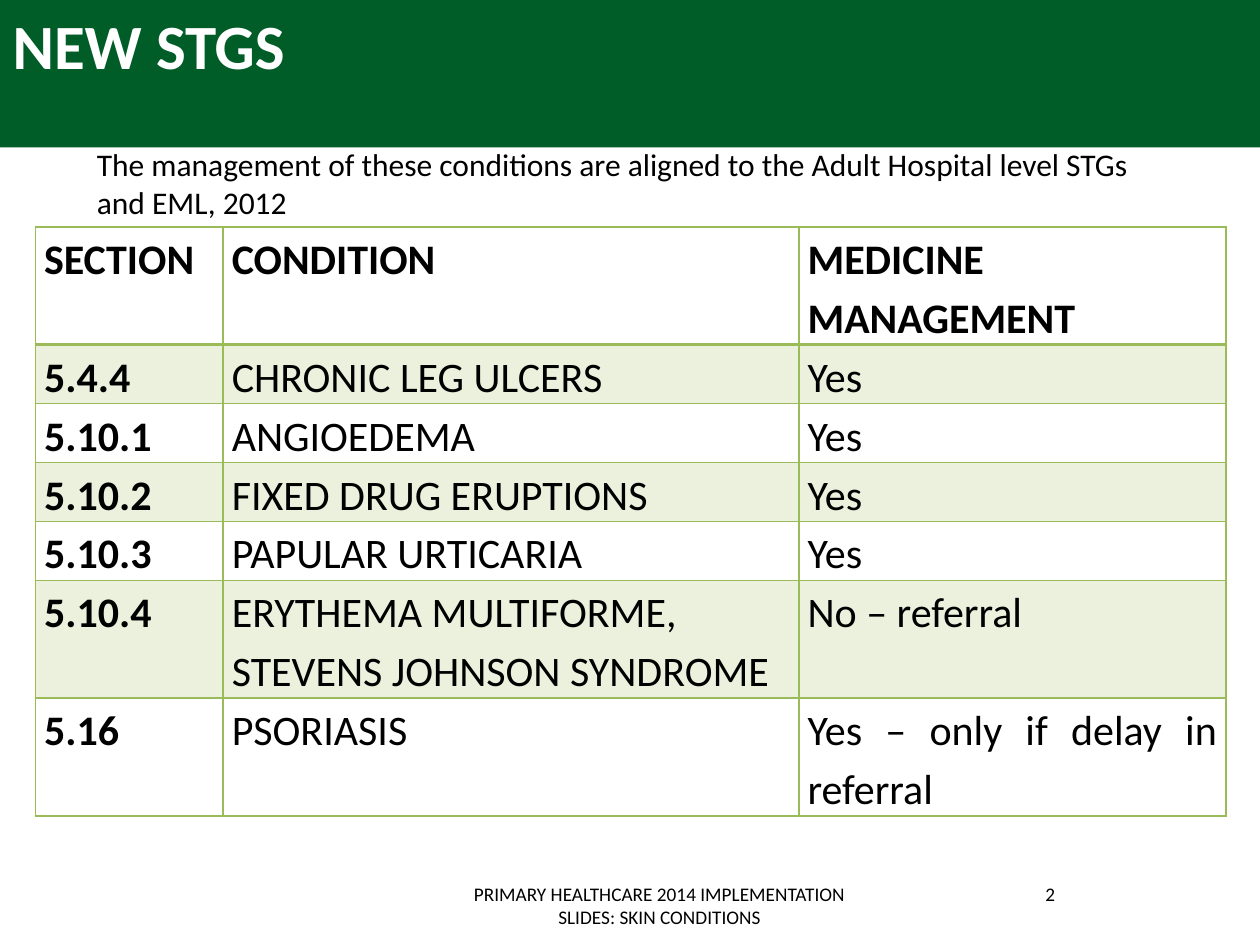
from lxml import etree
from pptx import Presentation
from pptx import util as u
from pptx.dml.color import RGBColor
from pptx.enum import shapes, text
from pptx.oxml.ns import qn

FONT = "Calibri"
BANNER_GREEN = RGBColor(0x00, 0x5D, 0x28)
TABLE_GREEN = RGBColor(0x9B, 0xBB, 0x59)
WHITE = RGBColor(0xFF, 0xFF, 0xFF)
BLACK = RGBColor(0, 0, 0)

ROWS = [
    ("SECTION", "CONDITION", "MEDICINE MANAGEMENT"),
    ("5.4.4", "CHRONIC LEG ULCERS", "Yes"),
    ("5.10.1", "ANGIOEDEMA", "Yes"),
    ("5.10.2", "FIXED DRUG ERUPTIONS", "Yes"),
    ("5.10.3", "PAPULAR URTICARIA", "Yes"),
    ("5.10.4", "ERYTHEMA MULTIFORME, STEVENS JOHNSON SYNDROME", "No – referral"),
    ("5.16", "PSORIASIS", "Yes – only if delay in referral"),
]
COLUMN_WIDTHS = (1.49, 4.57, 3.39)
ROW_HEIGHT, TALL_ROW_HEIGHT, TALL_ROW = 0.39, 0.81, 5


def inches(box):
    """Turn a left, top, width, height box into lengths."""
    return [u.Inches(length) for length in box]


def write(frame, words, size, color=BLACK, bold=False, align=text.PP_ALIGN.LEFT):
    """Put one formatted paragraph in a text frame and return it."""
    frame.text = words
    frame.word_wrap = True
    para = frame.paragraphs[0]
    para.alignment = align
    font = para.runs[0].font
    font.name, font.size, font.bold = FONT, u.Pt(size), bold
    font.color.rgb = color
    return para


def add_banner(page, box):
    """Draw the green band behind the title."""
    band = page.shapes.add_shape(shapes.MSO_SHAPE.RECTANGLE, *inches(box))
    band.shadow.inherit = False
    band.fill.solid()
    band.fill.fore_color.rgb = BANNER_GREEN
    band.line.fill.background()
    page.shapes._spTree.insert(2, band._element)


def set_title(page, box, words):
    """Place and format the title placeholder."""
    title = page.shapes.title
    title.left, title.top, title.width, title.height = inches(box)
    write(title.text_frame, words, 36, WHITE, True)
    title.text_frame.vertical_anchor = text.MSO_ANCHOR.TOP
    title.text_frame.auto_size = text.MSO_AUTO_SIZE.NONE


def add_text(page, box, words, size, align=text.PP_ALIGN.LEFT):
    """Add a wrapped text box."""
    frame = page.shapes.add_textbox(*inches(box)).text_frame
    write(frame, words, size, align=align)
    return frame


def set_borders(cell, widths):
    """Draw the four cell borders, given points by side."""
    for index, side in enumerate("LRTB"):
        line = etree.Element(qn(f"a:ln{side}"), w=str(u.Pt(widths.get(side, 1))))
        fill = etree.SubElement(line, qn("a:solidFill"))
        etree.SubElement(fill, qn("a:srgbClr"), val=str(TABLE_GREEN))
        cell._tc.get_or_add_tcPr().insert(index, line)


def format_cell(cell, words, row, column):
    """Write, fill and border one table cell."""
    cell.margin_left = cell.margin_right = u.Inches(0.07)
    cell.margin_top = cell.margin_bottom = 0
    wrapped_name = row == TALL_ROW and column == 1
    align = text.PP_ALIGN.LEFT if wrapped_name else text.PP_ALIGN.JUSTIFY
    para = write(cell.text_frame, words, 24, bold=row == 0 or column == 0, align=align)
    para.line_spacing = 1.15
    if row % 2:
        cell.fill.solid()
        cell.fill.fore_color.rgb = TABLE_GREEN
        color = cell._tc.tcPr.find(".//" + qn("a:srgbClr"))
        etree.SubElement(color, qn("a:alpha"), val="20000")
    else:
        cell.fill.background()
    set_borders(cell, {0: {"B": 2}, 1: {"T": 2}}.get(row, {}))


def add_conditions_table(page, box):
    """Add the table of conditions and their management."""
    holder = page.shapes.add_table(len(ROWS), len(COLUMN_WIDTHS), *inches(box))
    table = holder.table
    table.first_row = table.horz_banding = False
    for column, width in zip(table.columns, COLUMN_WIDTHS):
        column.width = u.Inches(width)
    for row, values in enumerate(ROWS):
        height = TALL_ROW_HEIGHT if row == TALL_ROW else ROW_HEIGHT
        table.rows[row].height = u.Inches(height)
        for column, words in enumerate(values):
            format_cell(table.cell(row, column), words, row, column)
    holder.height = u.Inches(box[3])


def main():
    """Build and save the slide."""
    deck = Presentation()
    deck.slide_width, deck.slide_height = u.Inches(10), u.Inches(7.5)
    page = deck.slides.add_slide(deck.slide_layouts[5])
    add_banner(page, (0, 0, 10, 1.17))
    set_title(page, (0, 0, 9, 1.25), "NEW STGS")
    add_conditions_table(page, (0.28, 1.8, 9.45, 4.6))
    note = add_text(
        page, (0.67, 1.1, 8.58, 0.71),
        "The management of these conditions are aligned to the Adult Hospital level STGs and EML, 2012", 18)
    note.auto_size = text.MSO_AUTO_SIZE.SHAPE_TO_FIT_TEXT
    add_text(page, (3.42, 6.95, 3.63, 0.4),
             "PRIMARY HEALTHCARE 2014 IMPLEMENTATION SLIDES: SKIN CONDITIONS", 11, text.PP_ALIGN.CENTER)
    add_text(page, (7.17, 6.95, 2.33, 0.4), "2", 11, text.PP_ALIGN.CENTER)
    deck.save("out.pptx")


if __name__ == "__main__":
    main()
